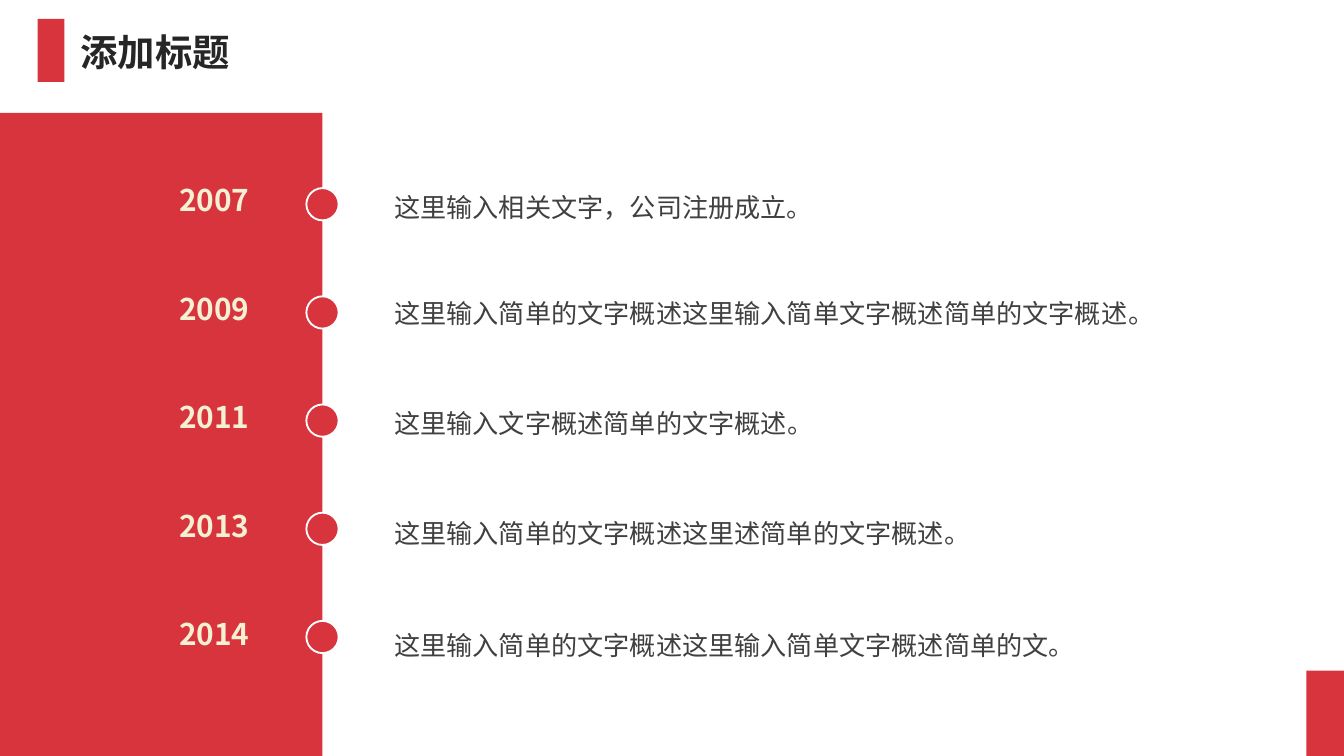
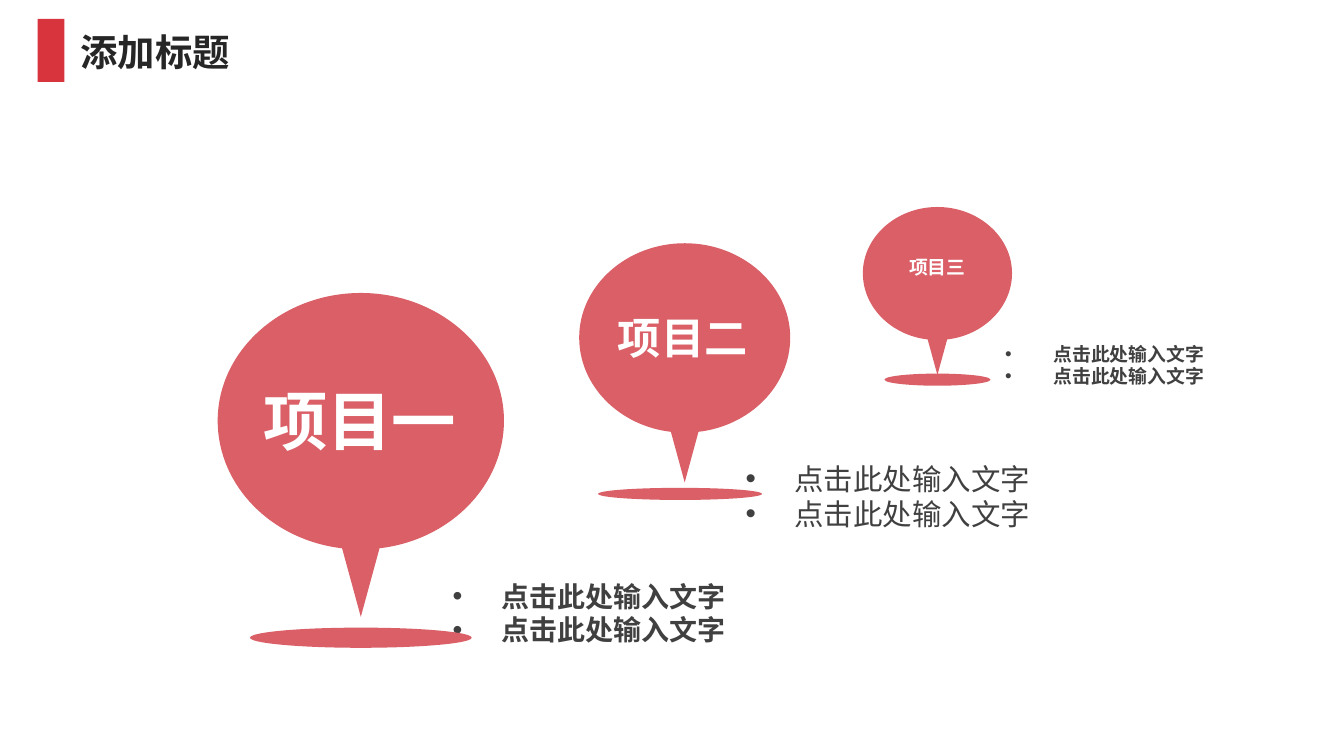
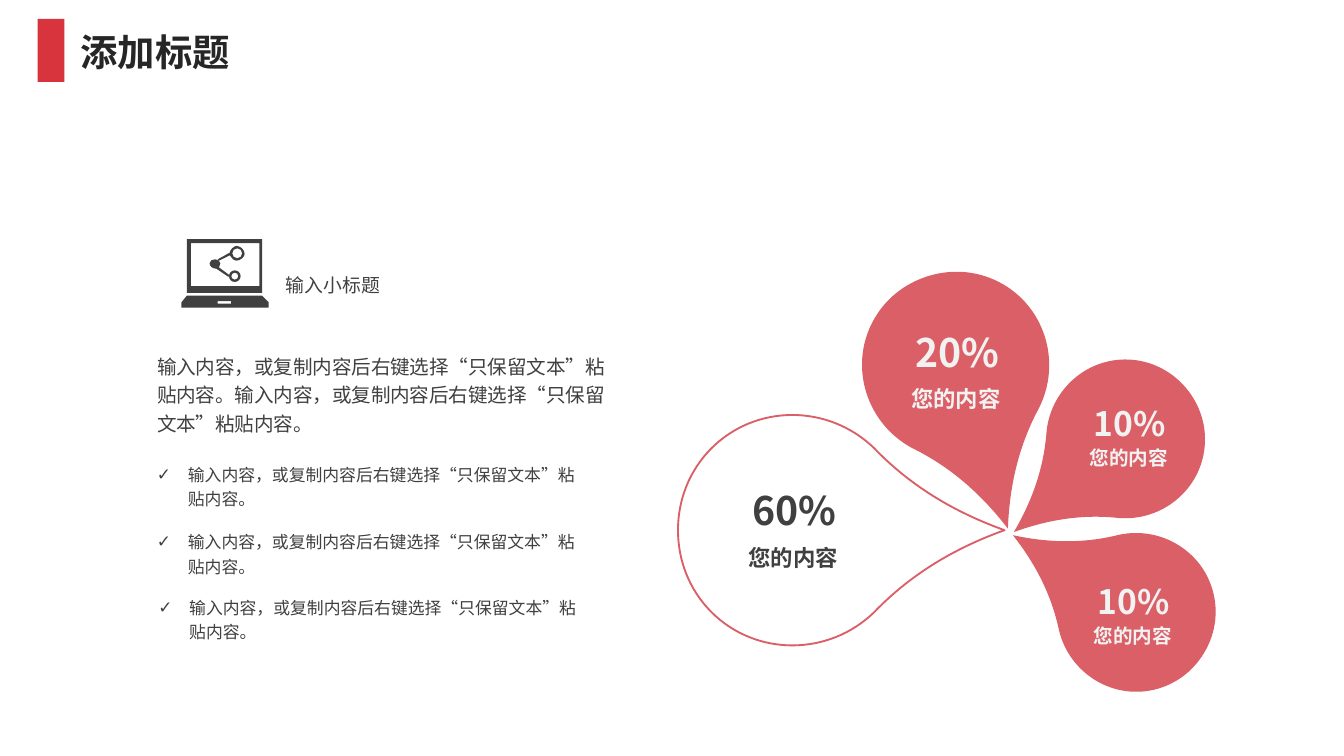
"""Build a three-slide deck: a timeline, a row of map pins and a petal diagram."""
from dataclasses import dataclass

from lxml import etree
from pptx import Presentation
from pptx.dml.color import RGBColor
from pptx.enum import shapes, text as txt
from pptx.oxml import ns
from pptx.util import Inches, Pt

COLORS = {
    "red": "D8343E", "rose": "DA5F66", "white": "FFFFFF", "cream": "F4F0D2",
    "pale": "F2F2F2", "body": "404040", "title": "262626",
}
CJK = "Noto Sans CJK SC"
RECT, OVAL = shapes.MSO_SHAPE.RECTANGLE, shapes.MSO_SHAPE.OVAL
ALIGN = txt.PP_ALIGN
INSET = (0.1, 0.05)
WIDE_INSET = (0.4 / 3, 0.2 / 3)
Point = tuple[float, float]
Box = tuple[float, float, float, float]
Step = tuple[Point, ...]


@dataclass
class Contour:
    start: Point
    steps: list[Step]


@dataclass
class Event:
    year: str
    note: str
    note_top: float
    tail: str = ""


@dataclass
class Items:
    box: Box
    size: float
    bold: bool = True
    wrap: bool = False


@dataclass
class Pin:
    name: str
    box: Box
    shadow: Box
    label: Box
    size: float
    label_fill: str | None = "rose"


@dataclass
class LabelStyle:
    share_size: float
    share_height: float
    name_size: float
    name_height: float
    gap: float


@dataclass
class Drop:
    share: str
    box: Box
    turn: float
    label: Point
    style: LabelStyle
    filled: bool = True


BIG = LabelStyle(21, 0.45, 12, 0.3, 0.43)
SMALL = LabelStyle(18, 0.4, 10.5, 0.28, 0.32)

EVENTS = [
    Event("2007", "这里输入相关文字，公司注册成立。", 1.24),
    Event("2009", "这里输入简单的文字概述这里输入简单文字概述简单的文字概述", 2.03, "。"),
    Event("2011", "这里输入文字概述简单的文字概述", 2.85, "。"),
    Event("2013", "这里输入简单的文字概述这里述简单的文字概述", 3.67, "。"),
    Event("2014", "这里输入简单的文字概述这里输入简单文字概述简单的文。", 4.5),
]
ITEMS = [
    Items((5.45, 3.38, 2.33, 0.63), 15.8, bold=False),
    Items((3.27, 4.26, 2.62, 0.6), 15, wrap=True),
    Items((7.38, 2.5, 1.69, 0.44), 10.1),
]
PINS = [
    Pin("项目一", (1.62, 2.18, 2.13, 2.41), (1.86, 4.67, 1.65, 0.15),
        (1.85, 2.79, 1.65, 0.68), 34.5, None),
    Pin("项目二", (4.31, 1.81, 1.57, 1.78), (4.45, 3.63, 1.22, 0.09),
        (4.49, 2.27, 1.18, 0.49), 23.2),
    Pin("项目三", (6.42, 1.54, 1.11, 1.25), (6.58, 2.78, 0.79, 0.09),
        (6.66, 1.85, 0.63, 0.27), 10.1),
]
DROPS = [
    Drop("60%", (5.41, 2.73, 1.7, 2.43), 270, (5.5, 3.57), BIG, False),
    Drop("20%", (6.51, 2.01, 1.38, 1.97), 342.3, (6.71, 2.39), BIG),
    Drop("10%", (7.6, 2.59, 1.17, 1.67), 50.2, (8.04, 2.95), SMALL),
    Drop("10%", (7.66, 3.59, 1.17, 1.67), 122, (8.07, 4.27), SMALL),
]


def rgb(name: str) -> RGBColor:
    """Look up a palette colour."""
    return RGBColor.from_string(COLORS[name])


def paint(sp, fill: str | None, line: str | None = None) -> None:
    """Set fill and outline and drop the shadow."""
    sp.shadow.inherit = False
    if fill:
        sp.fill.solid()
        sp.fill.fore_color.rgb = rgb(fill)
    else:
        sp.fill.background()
    if line:
        sp.line.color.rgb = rgb(line)
        sp.line.width = Pt(1)
    else:
        sp.line.fill.background()


def shape(s, kind, box: Box, fill: str, line: str | None = None):
    """Add a preset shape."""
    sp = s.shapes.add_shape(kind, *map(Inches, box))
    paint(sp, fill, line)
    return sp


def text(s, box: Box, *lines: str, size: float, color: str = "body", bold: bool = False,
         font: str = CJK, tail: str = "", align=None, spacing=None, bullet: str = "",
         indent: float = 0, wrap: bool = True, inset: Point = INSET,
         fill: str | None = None) -> None:
    """Add formatted text, one paragraph per line."""
    sp = shape(s, RECT, box, fill) if fill else s.shapes.add_textbox(*map(Inches, box))
    tf = sp.text_frame
    tf.word_wrap = wrap
    tf.auto_size = txt.MSO_AUTO_SIZE.SHAPE_TO_FIT_TEXT
    tf.vertical_anchor = txt.MSO_ANCHOR.TOP
    tf.margin_left = tf.margin_right = Inches(inset[0])
    tf.margin_top = tf.margin_bottom = Inches(inset[1])
    for i, line in enumerate(lines):
        p = tf.add_paragraph() if i else tf.paragraphs[0]
        p.alignment = align or ALIGN.LEFT
        if spacing:
            p.line_spacing = spacing
        if bullet:
            pr = p._p.get_or_add_pPr()
            pr.set("marL", str(Inches(indent)))
            pr.set("indent", str(-Inches(indent)))
            etree.SubElement(pr, ns.qn("a:buFont")).set("typeface", "Arial")
            etree.SubElement(pr, ns.qn("a:buChar")).set("char", bullet)
        for part, face in ((line, font), (tail, CJK)):
            if not part:
                continue
            r = p.add_run()
            r.text = part
            r.font.name, r.font.size, r.font.bold = face, Pt(size), bold
            r.font.color.rgb = rgb(color)
            etree.SubElement(r._r.get_or_add_rPr(), ns.qn("a:ea")).set("typeface", CJK)


def polygon(*pts: Point) -> Contour:
    """Return a straight-sided contour."""
    return Contour(pts[0], [(pt,) for pt in pts[1:]])


def rect(left: float, top: float, right: float, bottom: float) -> Contour:
    """Return a rectangular contour."""
    return polygon((left, top), (right, top), (right, bottom), (left, bottom))


def circle(x: float, y: float, r: float) -> Contour:
    """Return a circle of four curves."""
    k = 0.55 * r
    return Contour((x + r, y), [
        ((x + r, y + k), (x + k, y + r), (x, y + r)),
        ((x - k, y + r), (x - r, y + k), (x - r, y)),
        ((x - r, y - k), (x - k, y - r), (x, y - r)),
        ((x + k, y - r), (x + r, y - k), (x + r, y)),
    ])


def mirrored(width: float, start: Point, *steps: Step) -> Contour:
    """Close a right half with its reflection."""
    starts = [start, *(step[-1] for step in steps)]
    back = [tuple((width - x, y) for x, y in (*step[-2::-1], begin))
            for begin, step in zip(starts, steps)]
    return Contour(start, [*steps, *reversed(back)])


def freeform(s, box: Box, *contours: Contour, size: Point | None = None,
             origin: Point = (0, 0), fill: str | None = None, line: str | None = None,
             turn: float = 0) -> None:
    """Draw contours as one shape, stretched from their own size to the box."""
    left, top, width, height = map(Inches, box)
    fb = s.shapes.build_freeform(left, top)
    fb.add_line_segments([(left + width, top), (left + width, top + height),
                          (left, top + height)])
    sp = fb.convert_to_shape()
    outline = sp._element.find(".//" + ns.qn("a:path"))
    for child in list(outline):
        outline.remove(child)
    for name, length in zip("wh", size or box[2:]):
        outline.set(name, str(Inches(length)))

    def command(tag: str, pts: Step) -> None:
        """Append one drawing command."""
        node = etree.SubElement(outline, ns.qn(tag))
        for x, y in pts:
            pt = etree.SubElement(node, ns.qn("a:pt"))
            pt.set("x", str(Inches(x - origin[0])))
            pt.set("y", str(Inches(y - origin[1])))

    for contour in contours:
        command("a:moveTo", (contour.start,))
        for step in contour.steps:
            command("a:cubicBezTo" if len(step) == 3 else "a:lnTo", step)
        command("a:close", ())
    paint(sp, fill, line)
    sp.rotation = turn


PIN_SIZE, DROP_SIZE = (2.14, 2.41), (1.7, 2.43)
PIN = mirrored(2.14, (1.07, 0), ((1.66, 0), (2.14, 0.43), (2.14, 0.95)),
               ((2.14, 1.44), (1.73, 1.84), (1.21, 1.9)), ((1.07, 2.41),))
DROP = mirrored(1.7, (0.85, 0), ((1.07, 0), (1.29, 0.08), (1.46, 0.25)),
                ((1.79, 0.58), (1.79, 1.12), (1.46, 1.46)),
                ((1.19, 1.72), (0.99, 2.04), (0.85, 2.43)))
LAPTOP = [
    ((1.39, 1.78, 0.56, 0.4), [rect(1.39, 1.78, 1.95, 2.18), rect(1.42, 1.81, 1.93, 2.13)]),
    ((1.62, 1.83, 0.19, 0.11), [
        Contour((1.82, 1.89), [
            ((1.82, 1.91), (1.79, 1.94), (1.76, 1.94)),
            ((1.74, 1.94), (1.72, 1.92), (1.71, 1.9)),
            ((1.63, 1.94),), ((1.62, 1.93),), ((1.71, 1.88),),
            ((1.71, 1.86), (1.74, 1.83), (1.76, 1.83)),
            ((1.79, 1.83), (1.82, 1.86), (1.82, 1.89))]),
        circle(1.765, 1.885, 0.037)]),
    ((1.7, 2.01, 0.09, 0.09), [circle(1.747, 2.055, 0.043), circle(1.747, 2.055, 0.026)]),
    ((1.56, 1.93, 0.14, 0.13), [
        Contour((1.64, 1.96), [
            ((1.64, 1.97), (1.63, 1.98), (1.63, 1.99)),
            ((1.71, 2.05),), ((1.7, 2.06),), ((1.61, 2),),
            ((1.58, 2), (1.56, 1.98), (1.56, 1.96)),
            ((1.56, 1.94), (1.58, 1.93), (1.6, 1.93)),
            ((1.62, 1.93), (1.64, 1.94), (1.64, 1.96))])]),
    ((1.35, 2.2, 0.65, 0.09), [
        polygon((1.35, 2.25), (1.39, 2.2), (1.95, 2.2), (2, 2.25), (2, 2.29), (1.35, 2.29)),
        rect(1.62, 2.24, 1.72, 2.26)]),
]


def new_slide(prs):
    """Add a blank slide with the shared title and marker."""
    s = prs.slides.add_slide(prs.slide_layouts[6])
    shape(s, RECT, (0.28, 0.14, 0.2, 0.47), "red")
    text(s, (0.5, 0.17, 1.32, 0.44), "添加标题", size=20, color="title", bold=True, wrap=False)
    return s


def timeline_slide(prs) -> None:
    """Draw the company timeline."""
    s = new_slide(prs)
    shape(s, RECT, (0, 0.84, 2.4, 5.09), "red")
    for i in range(len(EVENTS)):
        shape(s, OVAL, (2.28, 1.4 + i * 3.22 / 4, 0.24, 0.24), "red", "white")
    for i, event in enumerate(EVENTS):
        text(s, (1.2, 1.33 + i * 3.23 / 4, 0.86, 0.36), event.year, size=16, color="cream",
             bold=True, align=ALIGN.JUSTIFY, spacing=Pt(16), inset=WIDE_INSET)
        text(s, (2.8, event.note_top, 6.38, 0.49), event.note, tail=event.tail, size=14,
             font="Calibri", spacing=1.5, inset=WIDE_INSET)
    shape(s, RECT, (9.72, 4.99, 0.28, 0.98), "red")


def pins_slide(prs) -> None:
    """Draw three pins of falling size."""
    s = new_slide(prs)
    for items in ITEMS:
        text(s, items.box, *["点击此处输入文字"] * 2, size=items.size, bold=items.bold,
             bullet="•", indent=0.36, wrap=items.wrap)
    for pin in PINS:
        group = s.shapes.add_group_shape()
        freeform(group, pin.box, PIN, size=PIN_SIZE, fill="rose")
        shape(group, OVAL, pin.shadow, "rose")
        text(group, pin.label, pin.name, size=pin.size, color="white", bold=True,
             align=ALIGN.CENTER, wrap=False, fill=pin.label_fill)


def petals_slide(prs) -> None:
    """Draw the four shares as petals beside their description."""
    s = new_slide(prs)
    for drop in DROPS:
        group = s.shapes.add_group_shape()
        freeform(group, drop.box, DROP, size=DROP_SIZE, turn=drop.turn,
                 fill="rose" if drop.filled else None, line=None if drop.filled else "rose")
        (x, y), style = drop.label, drop.style
        color = "pale" if drop.filled else "body"
        text(group, (x - 0.03, y + style.gap, 0.95, style.name_height), "您的内容",
             size=style.name_size, color=color, bold=True)
        text(group, (x, y, 0.95, style.share_height), drop.share,
             size=style.share_size, color=color, bold=True)
    advice = "输入内容，或复制内容后右键选择“只保留文本”粘贴内容。"
    text(s, (1.07, 2.56, 3.61, 0.74), advice * 2, size=10.5, spacing=1.2)
    text(s, (2.03, 1.99, 1.33, 0.27), "输入小标题", size=10.1)
    icon = s.shapes.add_group_shape()
    for box, contours in LAPTOP:
        freeform(icon, box, *contours, origin=box[:2], fill="body")
    for left, top in [(1.07, 3.38), (1.07, 3.88), (1.08, 4.37)]:
        text(s, (left, top, 3.4, 0.46), advice, size=9, spacing=1.2, bullet="✓", indent=0.23)


def main() -> None:
    """Build and save the deck."""
    prs = Presentation()
    prs.slide_width, prs.slide_height = Inches(10), Inches(10 * 9 / 16)
    timeline_slide(prs)
    pins_slide(prs)
    petals_slide(prs)
    prs.save("out.pptx")


if __name__ == "__main__":
    main()
